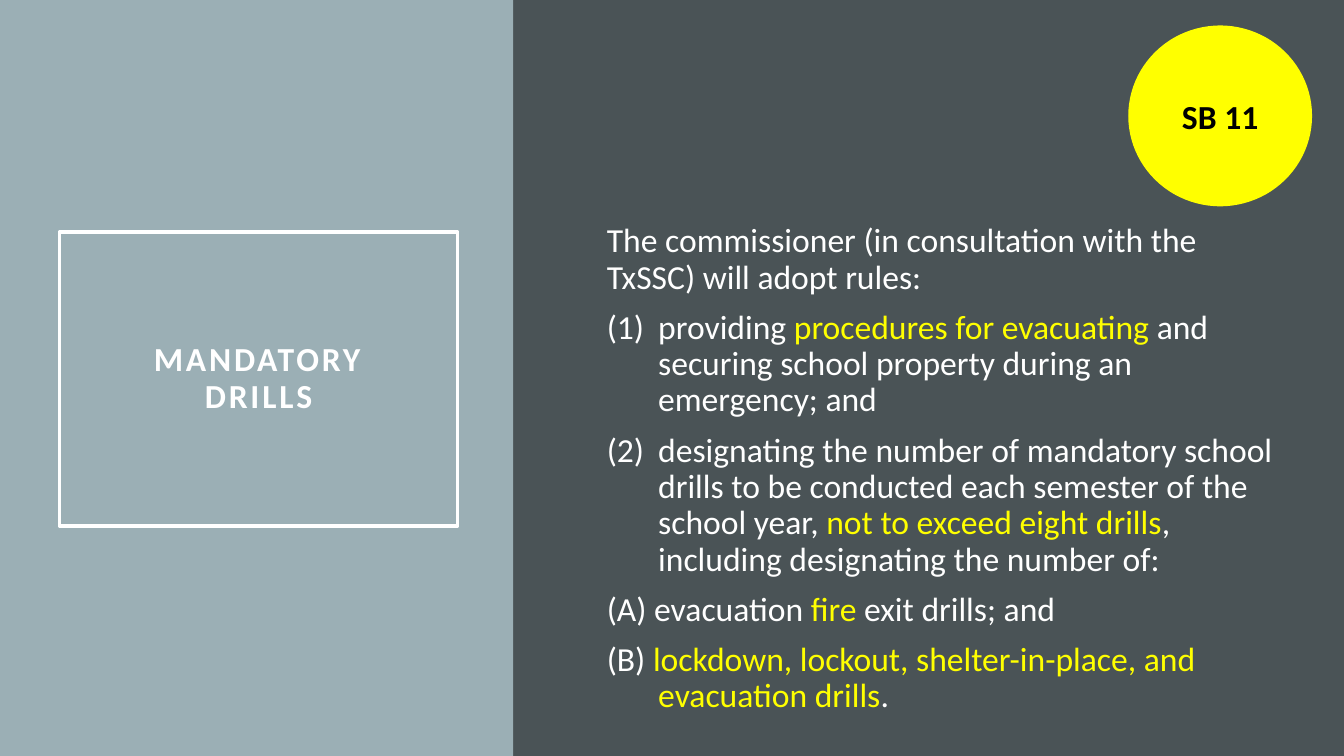
"""Build the slide on mandatory school drills."""
from pptx import Presentation
from pptx.dml.color import RGBColor
from pptx.enum.shapes import MSO_SHAPE as Shape
from pptx.enum.text import MSO_ANCHOR as Anchor, MSO_AUTO_SIZE as AutoSize, PP_ALIGN as Align
from pptx.oxml.xmlchemy import OxmlElement
from pptx.util import Pt

SLATE, MIST, WHITE, YELLOW, BLACK = "4A5356", "9BAFB5", "FFFFFF", "FFFF00", "000000"
HANGING = 36.72
RULES = [
    (0, [("The commissioner (in consultation with the TxSSC) will adopt rules:", WHITE)]),
    (HANGING, [("(1) \tproviding ", WHITE), ("procedures for evacuating ", YELLOW),
               ("and securing school property during an emergency; and", WHITE)]),
    (HANGING, [("(2) \tdesignating the number of mandatory school drills to be conducted "
                "each semester of the school year, ", WHITE),
               ("not to exceed eight drills", YELLOW),
               (", including designating the number of:", WHITE)]),
    (HANGING, [("(A) evacuation ", WHITE), ("fire", YELLOW), (" exit drills; and", WHITE)]),
    (HANGING, [("(B) ", WHITE),
               ("lockdown, lockout, shelter-in-place, and evacuation drills", YELLOW),
               (".", WHITE)]),
]


def paint(color_format, color):
    """Set a colour from a hex string."""
    color_format.rgb = RGBColor.from_string(color)


def write(paragraph, text, color=WHITE, bold=False, tracking=0):
    """Add a formatted run to a paragraph."""
    run = paragraph.add_run()
    run.text = text
    font = run.font
    font.name, font.size, font.bold = "Calibri", Pt(24), bold
    paint(font.color, color)
    if tracking:
        font._element.set("spc", str(tracking * 100))


def place(item, left, top, width, height):
    """Set position and size in points."""
    item.left, item.top, item.width, item.height = map(Pt, (left, top, width, height))


def add_filled(slide, kind, box, color):
    """Add a flat shape of one colour."""
    shape = slide.shapes.add_shape(kind, *map(Pt, box))
    shape.shadow.inherit = False
    shape.fill.solid()
    paint(shape.fill.fore_color, color)
    paint(shape.line.color, color)
    shape.line.width = Pt(1)
    return shape


def fill_title(title):
    """Frame and write the title."""
    place(title, 42.48, 165.6, 284.4, 210.24)
    paint(title.line.color, WHITE)
    title.line.width = Pt(2.5)
    frame = title.text_frame
    frame.vertical_anchor, frame.auto_size = Anchor.MIDDLE, AutoSize.NONE
    frame.margin_left = frame.margin_right = Pt(14.4)
    frame.margin_top = frame.margin_bottom = Pt(14.4)
    heading = frame.paragraphs[0]
    heading.alignment, heading.line_spacing = Align.CENTER, 0.9
    write(heading, "MANDATORY", bold=True, tracking=2)
    heading.add_line_break()
    write(heading, "DRILLS", bold=True, tracking=2)


def fill_rules(body):
    """Write the rules with hanging indents and highlights."""
    place(body, 426.24, 156.24, 491.04, 373.68)
    frame = body.text_frame
    frame.vertical_anchor, frame.auto_size = Anchor.TOP, AutoSize.NONE
    for index, (indent, parts) in enumerate(RULES):
        rule = frame.add_paragraph() if index else frame.paragraphs[0]
        rule.line_spacing = 0.9
        rule.space_before = Pt(10 if index else 0)
        properties = rule._p.get_or_add_pPr()
        properties.set("marL", str(Pt(indent)))
        properties.set("indent", str(Pt(-indent)))
        properties.append(OxmlElement("a:buNone"))
        for text, color in parts:
            write(rule, text, color=color)


def main():
    """Build and save the slide."""
    deck = Presentation()
    deck.slide_width, deck.slide_height = Pt(960), Pt(540)
    slide = deck.slides.add_slide(deck.slide_layouts[1])
    slide.background.fill.solid()
    paint(slide.background.fill.fore_color, SLATE)

    title_panel = add_filled(slide, Shape.RECTANGLE, (0, 0, 366.48, 540), MIST)
    title_panel.line.fill.background()
    slide.shapes._spTree.insert(2, title_panel._element)
    fill_title(slide.shapes.title)
    fill_rules(slide.placeholders[1])

    bill_badge = add_filled(slide, Shape.OVAL, (806.4, 18.72, 130.32, 128.16), YELLOW)
    bill_badge.text_frame.vertical_anchor = Anchor.MIDDLE
    bill_name = bill_badge.text_frame.paragraphs[0]
    bill_name.alignment = Align.CENTER
    write(bill_name, "SB 11", color=BLACK, bold=True)
    deck.save("out.pptx")


if __name__ == "__main__":
    main()
